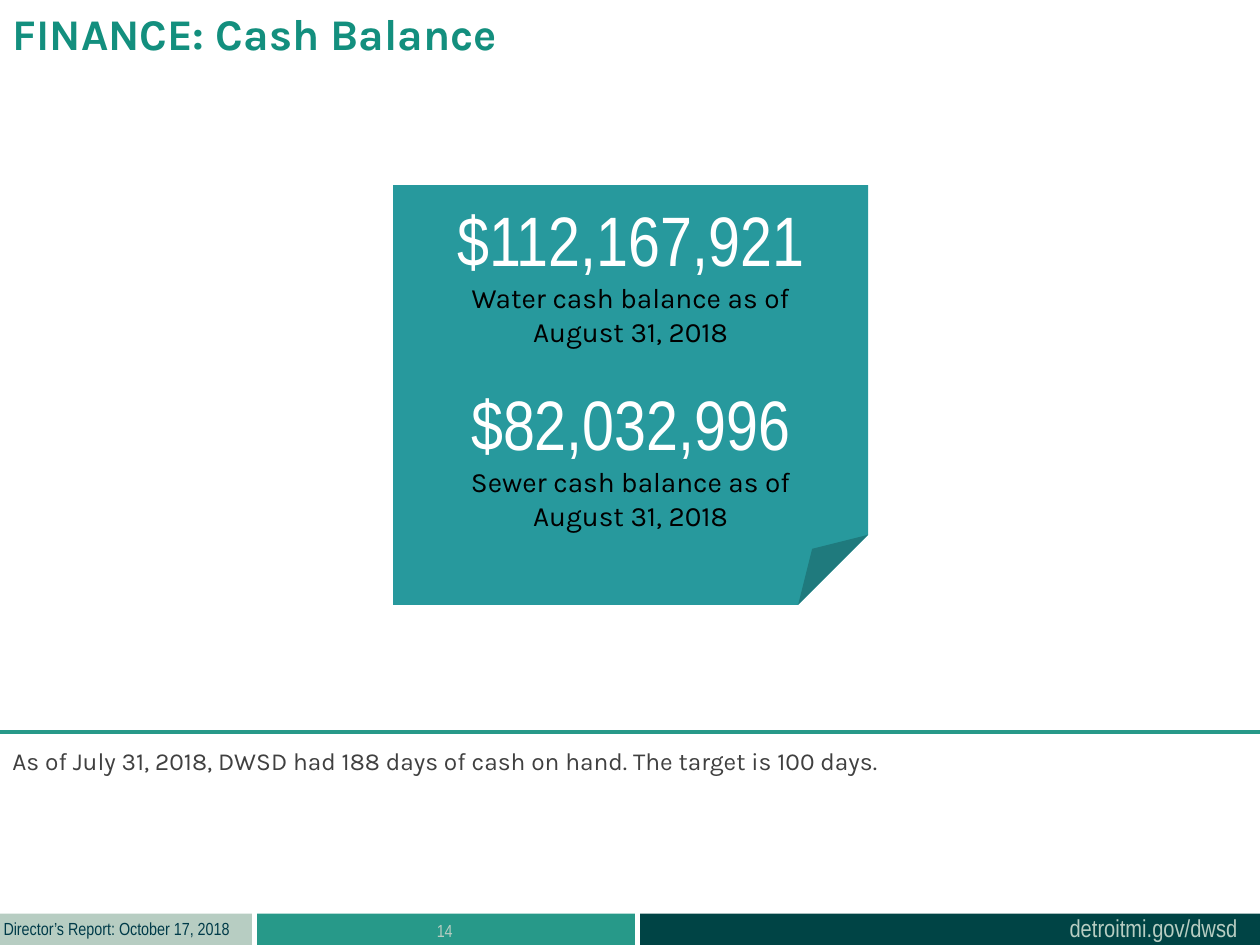
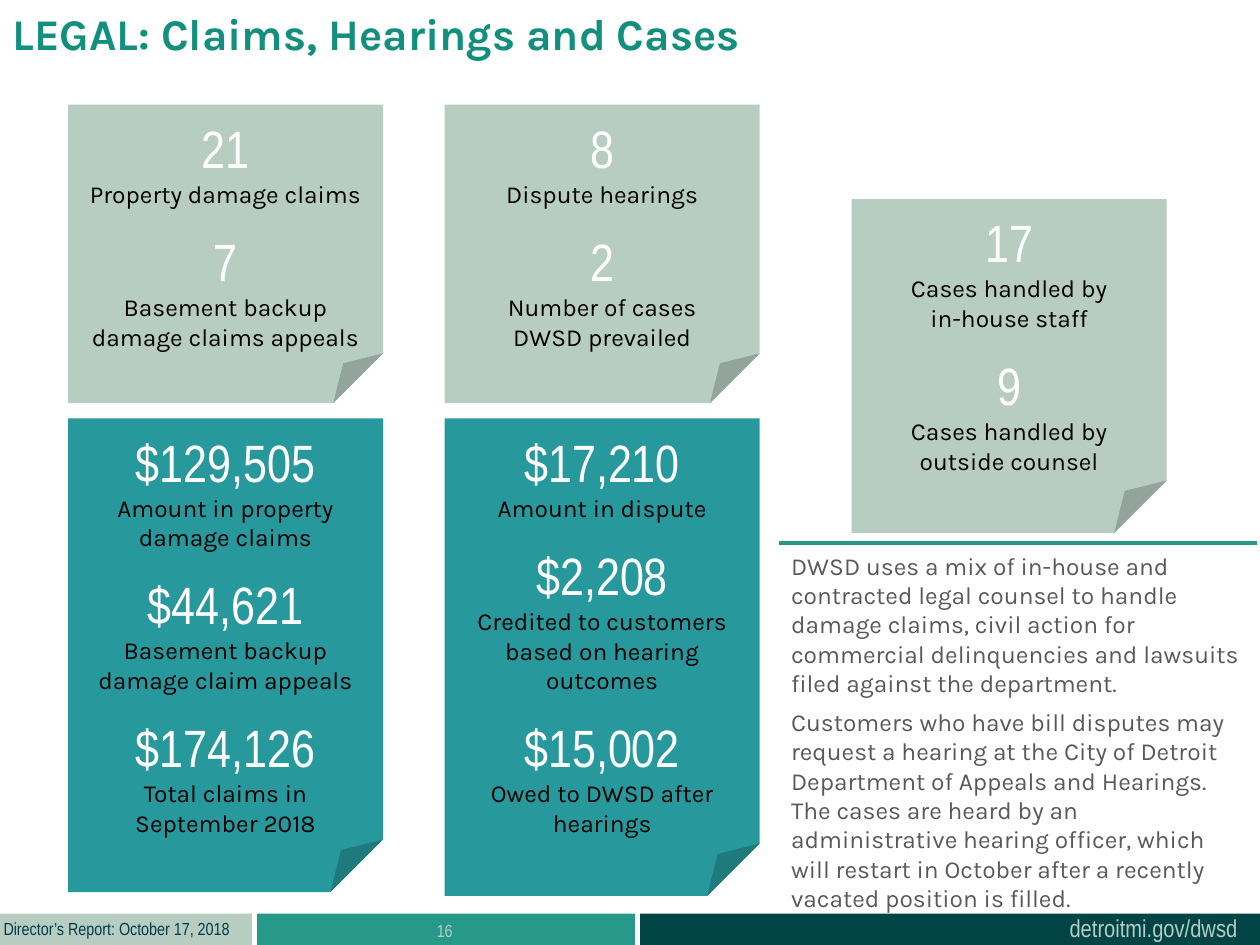
from lxml.etree import SubElement
from pptx import Presentation
from pptx.dml.color import RGBColor
from pptx.enum.shapes import MSO_CONNECTOR as CONN, MSO_SHAPE as SHAPE
from pptx.enum.text import MSO_ANCHOR as ANCHOR, MSO_AUTO_SIZE as AUTO, PP_ALIGN as ALIGN
from pptx.oxml.ns import qn
from pptx.util import Inches, Pt

TITLE_ONLY = 5
NARROW, KARLA = "Arial Narrow", "Karla"
GREEN, DARK, SAGE, TEAL = "279989", "004445", "B7CDC2", "27999D"
TITLE, NAVY, WHITE, BLACK = "138F7E", "003B49", "FFFFFF", "000000"
GREY, LIGHT_GREY = "404040", "595959"


def rgb(color):
    return RGBColor.from_string(color)


def write(p, text, *, size=14, font=KARLA, color=BLACK, bold=False, align=ALIGN.LEFT, before=0):
    """Fill a paragraph with formatted text; a newline becomes a line break."""
    p.alignment = align
    p.space_before = Pt(before)
    for i, line in enumerate(text.split("\n")):
        if i:
            p.add_line_break()
        r = p.add_run()
        r.text = line
        r.font.name, r.font.size, r.font.bold = font, Pt(size), bold
        r.font.color.rgb = rgb(color)


class Report:
    """Holds the presentation, its shared style and the current slide."""

    def __init__(self):
        self.prs = Presentation()
        self.prs.slide_width, self.prs.slide_height = Inches(10), Inches(7.5)
        self.s = None

    def slide(self, title, number):
        self.s = self.prs.slides.add_slide(self.prs.slide_layouts[TITLE_ONLY])
        self.footer(number)
        sp = self.s.shapes.title
        sp.left, sp.top, sp.width, sp.height = map(Inches, (0, 0, 7.59, 0.77))
        tf = sp.text_frame
        tf.auto_size, tf.vertical_anchor = AUTO.NONE, ANCHOR.TOP
        write(tf.paragraphs[0], title, size=25, color=TITLE, bold=True)

    def footer(self, number):
        for left, width, color in ((2.04, 3, GREEN), (5.08, 4.92, DARK), (0, 2, SAGE)):
            self.shape(SHAPE.RECTANGLE, left, 7.25, width, 0.25, color)
        self.text("detroitmi.gov/dwsd", 8.39, 7.2, 1.55, 0.34,
                  wrap=False, font=NARROW, color=SAGE)
        self.text("Director’s Report: October 17, 2018", -0.07, 7.24, 2.07, 0.27,
                  wrap=False, size=10, font=NARROW, color=NAVY)
        self.text(str(number), 2.03, 7.25, 3, 0.25,
                  size=10, font=NARROW, color=SAGE, align=ALIGN.CENTER)

    def shape(self, kind, left, top, width, height, color):
        sp = self.s.shapes.add_shape(kind, *map(Inches, (left, top, width, height)))
        sp.shadow.inherit = False
        sp.fill.solid()
        sp.fill.fore_color.rgb = rgb(color)
        sp.line.fill.background()
        return sp

    def text(self, text, left, top, width, height, wrap=True, **style):
        sp = self.s.shapes.add_textbox(*map(Inches, (left, top, width, height)))
        sp.text_frame.word_wrap = wrap
        write(sp.text_frame.paragraphs[0], text, **style)

    def rule(self, left, right, y):
        line = self.s.shapes.add_connector(CONN.STRAIGHT, *map(Inches, (right, y, left, y)))
        line.line.color.rgb = rgb(GREEN)
        line.line.width = Pt(2.25)
        SubElement(line._element.spPr, qn("a:effectLst"))

    def note(self, left, top, width, height, color, figures, big=30, small=14, gap=12):
        """Folded note listing (figure, label) pairs."""
        tf = self.shape(SHAPE.FOLDED_CORNER, left, top, width, height, color).text_frame
        tf.word_wrap = True
        tf.vertical_anchor = ANCHOR.TOP
        tf.margin_top = Inches(0.09)
        for i, (figure, label) in enumerate(figures):
            p = tf.add_paragraph() if i else tf.paragraphs[0]
            write(p, figure, size=big, font=NARROW, color=WHITE,
                  align=ALIGN.CENTER, before=gap if i else 0)
            write(tf.add_paragraph(), label, size=small, align=ALIGN.CENTER)


def cash_balance(report):
    report.slide("FINANCE: Cash Balance", 14)
    report.text("As of July 31, 2018, DWSD had 188 days of cash on hand. The target is 100 days.",
                0, 5.87, 10, 0.34, color=GREY)
    report.rule(0, 10, 5.81)
    report.note(3.12, 1.47, 3.77, 3.33, TEAL, [
        ("$112,167,921", "Water cash balance as of\nAugust 31, 2018"),
        ("$82,032,996", "Sewer cash balance as of\nAugust 31, 2018"),
    ], big=40, small=16, gap=19)


def legal(report):
    report.slide("LEGAL: Claims, Hearings and Cases", 16)
    claims, hearings, cases = 0.54, 3.53, 6.76
    counts, amounts, width = 0.83, 3.32, 2.5
    report.note(claims, counts, width, 2.37, SAGE, [
        ("21", "Property damage claims"),
        ("7", "Basement backup\ndamage claims appeals"),
    ])
    report.note(claims, amounts, width, 3.76, TEAL, [
        ("$129,505", "Amount in property\ndamage claims"),
        ("$44,621", "Basement backup damage claim appeals"),
        ("$174,126", "Total claims in\nSeptember 2018"),
    ])
    report.note(hearings, counts, width, 2.37, SAGE, [
        ("8", "Dispute hearings"),
        ("2", "Number of cases\nDWSD prevailed"),
    ])
    report.note(hearings, amounts, width, 3.79, TEAL, [
        ("$17,210", "Amount in dispute"),
        ("$2,208", "Credited to customers based on hearing outcomes"),
        ("$15,002", "Owed to DWSD after hearings"),
    ])
    report.note(cases, 1.58, width, 2.65, SAGE, [
        ("17", "Cases handled by\nin-house staff"),
        ("9", "Cases handled by\noutside counsel"),
    ])
    report.rule(6.18, 9.98, 4.31)
    report.text("DWSD uses a mix of in-house and contracted legal counsel to handle damage claims, "
                "civil action for commercial delinquencies and lawsuits filed against the "
                "department.", 6.18, 4.32, 3.82, 1.28, color=LIGHT_GREY)
    report.text("Customers who have bill disputes may request a hearing at the City of Detroit "
                "Department of Appeals and Hearings. The cases are heard by an administrative "
                "hearing officer, which will restart in October after a recently vacated "
                "position is filled.", 6.18, 5.56, 3.82, 1.51, color=LIGHT_GREY)


def main():
    report = Report()
    cash_balance(report)
    legal(report)
    report.prs.save("out.pptx")


if __name__ == "__main__":
    main()
